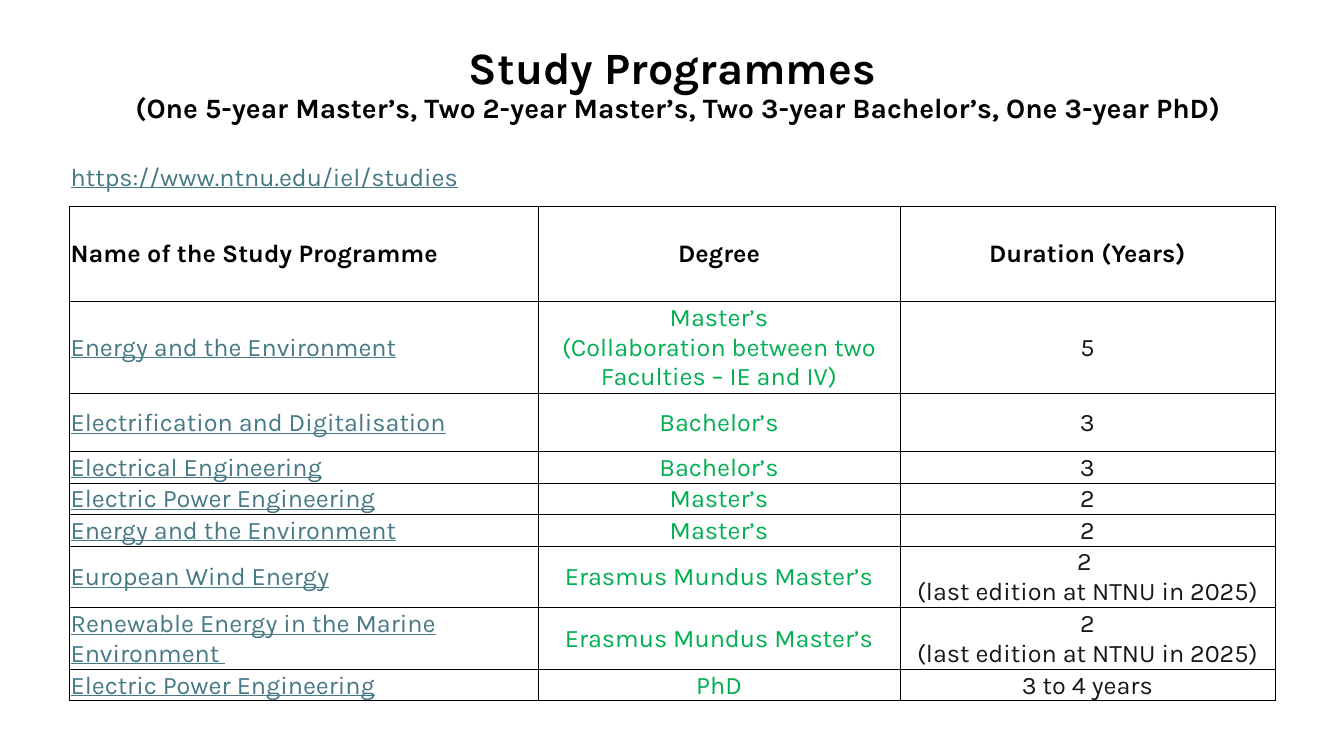
from dataclasses import dataclass

from lxml.etree import SubElement
from pptx import Presentation
from pptx.dml.color import RGBColor
from pptx.enum.text import MSO_ANCHOR as Anchor, PP_ALIGN as Align
from pptx.oxml.ns import qn
from pptx.slide import Slide
from pptx.table import _Cell as Cell
from pptx.text.text import _Paragraph as Paragraph
from pptx.util import Cm, Pt

FONT = "Karla"
COLORS = {"black": "000000", "link": "467886", "degree": "00B050", "duration": "171717"}
COLUMN_WIDTHS = (11.81, 9.12, 9.45)
SINGLE, DOUBLE, TRIPLE, HEADER = 0.79, 1.47, 2.26, 2.39


@dataclass
class TextStyle:
    color: str
    size: float = 18
    bold: bool = False
    underline: bool = False


@dataclass
class Row:
    height: float
    name: str
    degree: str
    duration: str


LINK = TextStyle("link", underline=True)
HEADING = TextStyle("black", bold=True)
BODY_STYLES = (LINK, TextStyle("degree"), TextStyle("duration"))

ROWS = [
    Row(DOUBLE, "https://www.ntnu.edu/iel/studies", "", ""),
    Row(HEADER, "Name of the Study Programme", "Degree", "Duration (Years)"),
    Row(TRIPLE, "Energy and the Environment",
        "Master’s\n(Collaboration between two Faculties – IE and IV)", "5"),
    Row(DOUBLE, "Electrification and Digitalisation", "Bachelor’s", "3"),
    Row(SINGLE, "Electrical Engineering", "Bachelor’s", "3"),
    Row(SINGLE, "Electric Power Engineering", "Master’s", "2"),
    Row(SINGLE, "Energy and the Environment", "Master’s", "2"),
    Row(DOUBLE, "European Wind Energy", "Erasmus Mundus Master’s",
        "2 \n(last edition at NTNU in 2025)"),
    Row(DOUBLE, "Renewable Energy in the Marine Environment ", "Erasmus Mundus Master’s",
        "2\n(last edition at NTNU in 2025)"),
    Row(SINGLE, "Electric Power Engineering", "PhD", "3 to 4 years"),
]


def add_run(paragraph: Paragraph, text: str, style: TextStyle) -> None:
    run = paragraph.add_run()
    run.text = text
    run.font.name = FONT
    run.font.size = Pt(style.size)
    run.font.bold = style.bold
    run.font.underline = style.underline
    run.font.color.rgb = RGBColor.from_string(COLORS[style.color])


def set_border(cell: Cell, side: str, width: float) -> None:
    """Draw one side of a cell; a width of zero leaves it open."""
    line = SubElement(cell._tc.get_or_add_tcPr(), qn(f"a:ln{side}"), w=str(Pt(width)))
    if width:
        fill = SubElement(line, qn("a:solidFill"))
        SubElement(fill, qn("a:srgbClr"), val=COLORS["black"])
    else:
        SubElement(line, qn("a:noFill"))


def fill_cell(cell: Cell, text: str, style: TextStyle, align: Align) -> None:
    cell.margin_left = cell.margin_right = cell.margin_top = Cm(0.03)
    cell.margin_bottom = 0
    cell.vertical_anchor = Anchor.MIDDLE
    frame = cell.text_frame
    for index, line in enumerate(text.split("\n")):
        paragraph = frame.add_paragraph() if index else frame.paragraphs[0]
        paragraph.alignment = align
        if line:
            add_run(paragraph, line, style)
        else:
            paragraph.font.size = Pt(style.size)


def add_title(slide: Slide) -> None:
    box = slide.shapes.add_textbox(Cm(0.66), Cm(1.02), Cm(32.87), Cm(3.17))
    box.text_frame.word_wrap = True
    paragraph = box.text_frame.paragraphs[0]
    paragraph.alignment = Align.CENTER
    paragraph.line_spacing = 0.9
    add_run(paragraph, "Study Programmes ", TextStyle("black", 32, bold=True))
    paragraph.add_line_break()
    add_run(paragraph,
            "(One 5-year Master’s, Two 2-year Master’s, Two 3-year Bachelor’s, One 3-year PhD)",
            TextStyle("black", 20, bold=True))


def add_programme_table(slide: Slide) -> None:
    table = slide.shapes.add_table(
        len(ROWS), len(COLUMN_WIDTHS), Cm(1.75), Cm(3.73),
        Cm(sum(COLUMN_WIDTHS)), Cm(sum(row.height for row in ROWS))).table
    table.first_row = table.horz_banding = False
    for column, width in zip(table.columns, COLUMN_WIDTHS):
        column.width = Cm(width)

    last = len(ROWS) - 1
    for r, row in enumerate(ROWS):
        table.rows[r].height = Cm(row.height)
        styles = {0: (LINK,) * 3, 1: (HEADING,) * 3}.get(r, BODY_STYLES)
        for c, text in enumerate((row.name, row.degree, row.duration)):
            cell = table.cell(r, c)
            fill_cell(cell, text, styles[c], Align.CENTER if c else Align.LEFT)
            # The link row is open, the grid below has a heavier outer edge
            side_width = 0.5 if r else 0
            set_border(cell, "L", 1 if r and c == 0 else side_width)
            set_border(cell, "R", side_width)
            set_border(cell, "T", 1 if r == 1 else side_width)
            set_border(cell, "B", 1 if r in (0, last) else 0.5)
            cell.fill.background()


def main() -> None:
    presentation = Presentation()
    presentation.slide_width, presentation.slide_height = Cm(33.87), Cm(19.05)
    slide = presentation.slides.add_slide(presentation.slide_layouts[6])
    add_title(slide)
    add_programme_table(slide)
    presentation.save("out.pptx")


if __name__ == "__main__":
    main()
